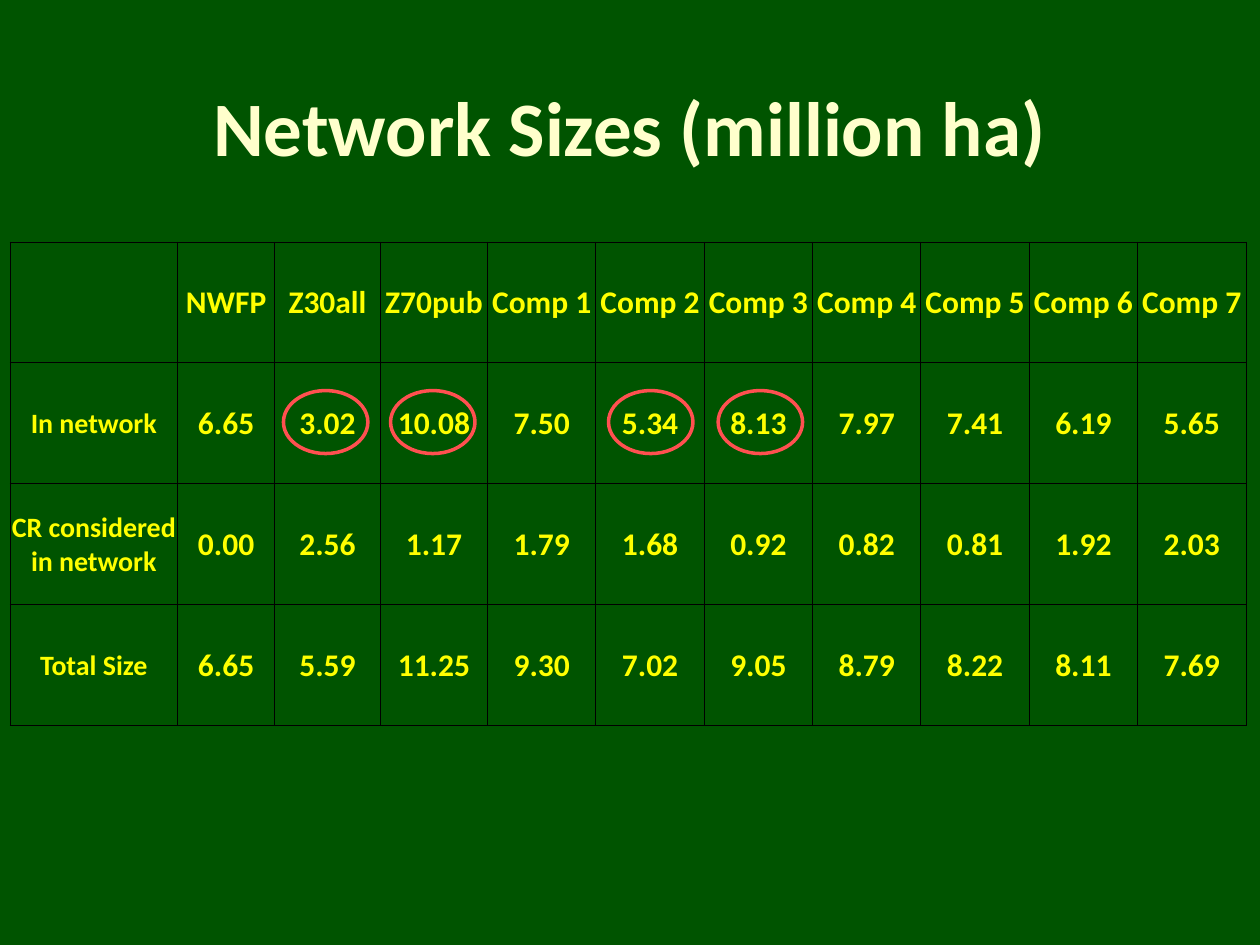
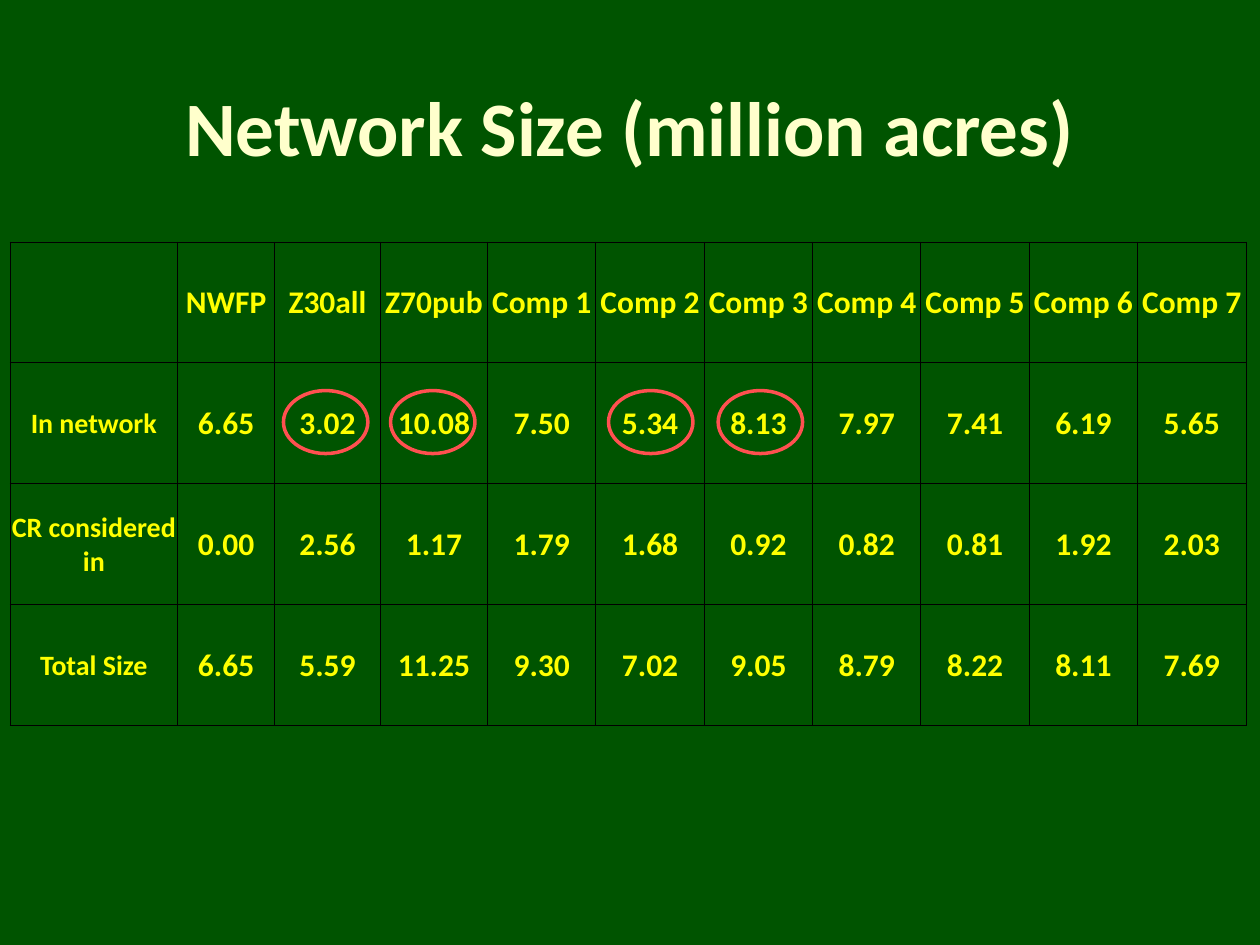
import pptx
import pptx.dml.color
import pptx.enum.shapes
import pptx.enum.text
import pptx.oxml
import pptx.oxml.ns
import pptx.util
from pptx.util import Inches

BACKGROUND = pptx.dml.color.RGBColor(0x00, 0x54, 0x00)
TITLE_COLOUR = pptx.dml.color.RGBColor(0xFF, 0xFF, 0xCC)
TABLE_TEXT = pptx.dml.color.RGBColor(0xFF, 0xFF, 0x00)
HIGHLIGHT = pptx.dml.color.RGBColor(0xFF, 0x50, 0x50)
BORDER = pptx.dml.color.RGBColor(0x00, 0x00, 0x00)
FONT = "Calibri"

COLUMN_WIDTHS = [1.33, 0.77, 0.84, 0.85] + [0.86] * 7
ROW_HEIGHT = 0.96
HIGHLIGHT_LEFTS = [2.25, 3.1, 4.83, 5.7]

NETWORKS = ["NWFP", "Z30all", "Z70pub"] + [f"Comp {number}" for number in range(1, 8)]
IN_NETWORK = ["6.65", "3.02", "10.08", "7.50", "5.34", "8.13", "7.97", "7.41", "6.19", "5.65"]
CR_CONSIDERED = ["0.00", "2.56", "1.17", "1.79", "1.68", "0.92", "0.82", "0.81", "1.92", "2.03"]
TOTAL_SIZE = ["6.65", "5.59", "11.25", "9.30", "7.02", "9.05", "8.79", "8.22", "8.11", "7.69"]

# Title and label of the CR row for each slide
SLIDES = [
    ("Network Sizes (million ha)", "CR considered in network"),
    ("Network Size (million acres)", "CR considered in"),
]


def write_text(text_frame, text, *, size, colour):
    """Write one centred bold paragraph."""
    paragraph = text_frame.paragraphs[0]
    paragraph.alignment = pptx.enum.text.PP_ALIGN.CENTER
    run = paragraph.add_run()
    run.text = text
    run.font.name = FONT
    run.font.size = pptx.util.Pt(size)
    run.font.bold = True
    run.font.color.rgb = colour


def add_cell_borders(cell):
    properties = cell._tc.get_or_add_tcPr()
    for side in ("lnL", "lnR", "lnT", "lnB"):
        properties.append(pptx.oxml.parse_xml(
            f'<a:{side} {pptx.oxml.ns.nsdecls("a")} w="{pptx.util.Pt(0.5)}">'
            f'<a:solidFill><a:srgbClr val="{BORDER}"/></a:solidFill></a:{side}>'
        ))


presentation = pptx.Presentation()
presentation.slide_width = Inches(10)
presentation.slide_height = Inches(7.5)
master_fill = presentation.slide_master.background.fill
master_fill.solid()
master_fill.fore_color.rgb = BACKGROUND
title_only = presentation.slide_layouts[5]

for title_text, cr_label in SLIDES:
    slide = presentation.slides.add_slide(title_only)

    title = slide.shapes.title
    title.left, title.top = Inches(0.5), Inches(0.5)
    title.width, title.height = Inches(9), Inches(1)
    title.text_frame.vertical_anchor = pptx.enum.text.MSO_ANCHOR.MIDDLE
    write_text(title.text_frame, title_text, size=44, colour=TITLE_COLOUR)

    rows = [
        ["", *NETWORKS],
        ["In network", *IN_NETWORK],
        [cr_label, *CR_CONSIDERED],
        ["Total Size", *TOTAL_SIZE],
    ]
    table = slide.shapes.add_table(
        len(rows), len(COLUMN_WIDTHS), Inches(0.08), Inches(1.92),
        Inches(sum(COLUMN_WIDTHS)), Inches(ROW_HEIGHT * len(rows)),
    ).table
    table.first_row = False
    table.horz_banding = False
    for column, width in zip(table.columns, COLUMN_WIDTHS):
        column.width = Inches(width)
    for row_index, values in enumerate(rows):
        table.rows[row_index].height = Inches(ROW_HEIGHT)
        for column_index, value in enumerate(values):
            cell = table.cell(row_index, column_index)
            add_cell_borders(cell)
            cell.fill.background()
            cell.vertical_anchor = pptx.enum.text.MSO_ANCHOR.MIDDLE
            cell.margin_left = cell.margin_right = cell.margin_top = Inches(0.01)
            cell.margin_bottom = 0
            if value:
                size = 16 if column_index == 0 else 18
                write_text(cell.text_frame, value, size=size, colour=TABLE_TEXT)

    for left in HIGHLIGHT_LEFTS:
        ellipse = slide.shapes.add_shape(
            pptx.enum.shapes.MSO_SHAPE.OVAL,
            Inches(left), Inches(3.1), Inches(0.67), Inches(0.5),
        )
        ellipse.shadow.inherit = False
        ellipse.fill.background()
        ellipse.line.color.rgb = HIGHLIGHT
        ellipse.line.width = pptx.util.Pt(2)

presentation.save("out.pptx")
